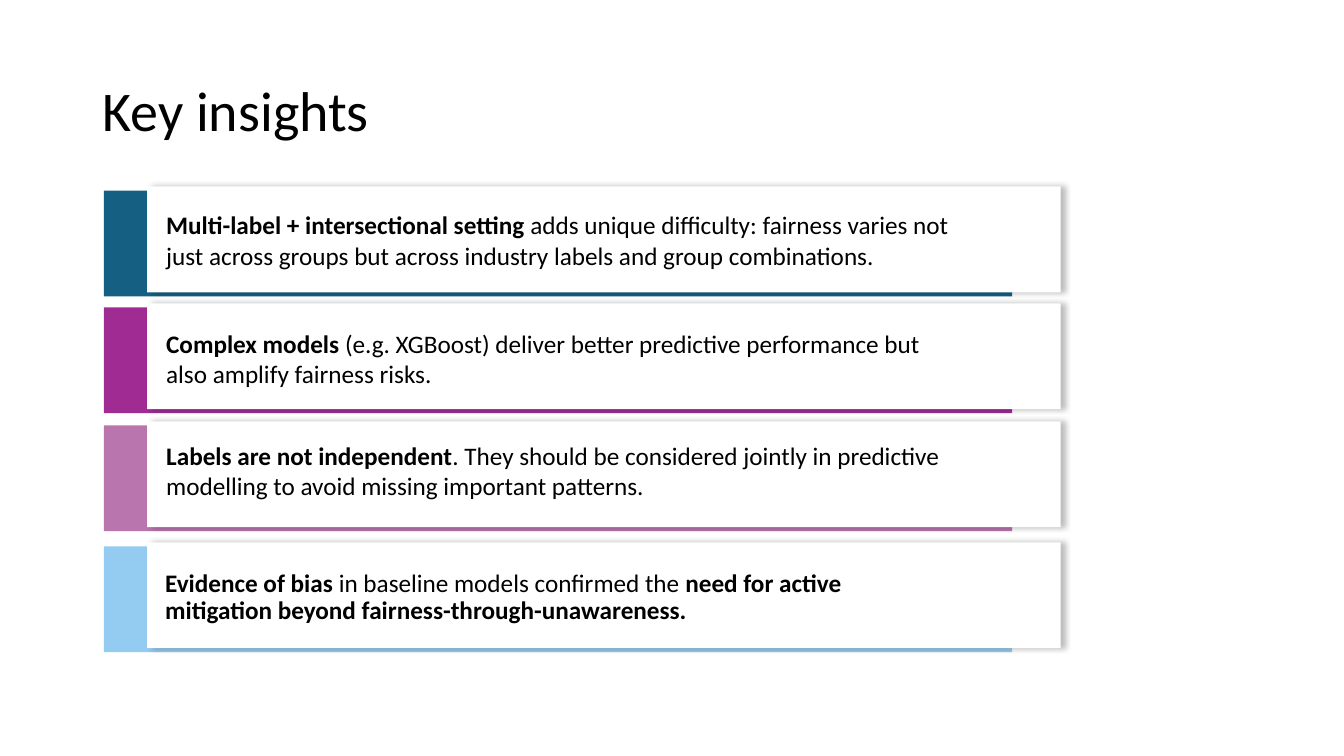
from dataclasses import dataclass

from lxml import etree
from pptx import Presentation
from pptx.dml.color import RGBColor
from pptx.enum.shapes import MSO_SHAPE
from pptx.enum.text import MSO_ANCHOR
from pptx.oxml import parse_xml
from pptx.oxml.ns import nsdecls
from pptx.shapes.autoshape import Shape
from pptx.slide import Slide
from pptx.util import Inches, Pt

COLORS = {
    "text": "000000",
    "card": "FFFFFF",
    "teal": "156082",
    "purple": "A02B93",
    "mauve": "B975AE",
    "sky": "93CCF0",
}
TITLE_FONT = {"name": "Calibri", "size": Pt(40), "bold": False}
BODY_FONT = {"name": "Calibri", "size": Pt(18)}

BAR_LEFT, BAR_WIDTH = 1.03, 9.01
CARD_LEFT, CARD_WIDTH = 1.46, 9.06
ROW_HEIGHT = 1.05
CARD_LIFT = 0.04


@dataclass
class Insight:
    color: str
    top: float
    text_box: tuple[float, float, float, float]
    runs: list[tuple[str, bool]]
    line_spacing: float = 1.0


INSIGHTS = [
    Insight("teal", 1.89, (1.55, 2.03, 8.36, 0.95), [
        ("Multi-label + intersectional setting ", True),
        ("adds unique difficulty: fairness varies not just across groups "
         "but across industry labels and group combinations.", False),
    ]),
    Insight("purple", 3.05, (1.55, 3.21, 7.93, 0.65), [
        ("Complex models ", True),
        ("(e.g. XGBoost) deliver better predictive performance but also "
         "amplify fairness risks.", False),
    ]),
    Insight("mauve", 4.22, (1.55, 4.32, 8.71, 0.87), [
        ("Labels are not independent", True),
        (". They should be considered jointly in predictive modelling to "
         "avoid missing important patterns.", False),
    ]),
    Insight("sky", 5.42, (1.54, 5.61, 7.12, 0.59), [
        ("Evidence of bias ", True),
        ("in baseline models confirmed the ", False),
        ("need for active mitigation beyond fairness-through-unawareness.", True),
    ], 0.9),
]


def add_rect(s: Slide, left: float, top: float, width: float, color: str) -> Shape:
    sp = s.shapes.add_shape(MSO_SHAPE.RECTANGLE, Inches(left), Inches(top),
                            Inches(width), Inches(ROW_HEIGHT))
    sp.shadow.inherit = False
    sp.fill.solid()
    sp.fill.fore_color.rgb = RGBColor.from_string(COLORS[color])
    sp.line.fill.background()
    return sp


def add_shadow(sp: Shape) -> None:
    effects = sp.element.spPr.find("{*}effectLst")
    shadow: etree.ElementBase = parse_xml(
        f'<a:outerShdw {nsdecls("a")} blurRad="{Pt(4)}" dist="{Pt(3)}" dir="0" '
        'algn="ctr" rotWithShape="0"><a:srgbClr val="000000">'
        '<a:alpha val="25000"/></a:srgbClr></a:outerShdw>')
    effects.append(shadow)


def add_text(s: Slide, box: tuple[float, float, float, float],
             runs: list[tuple[str, bool]], formats: dict,
             line_spacing: float, anchor: MSO_ANCHOR = MSO_ANCHOR.TOP) -> None:
    tf = s.shapes.add_textbox(*map(Inches, box)).text_frame
    tf.word_wrap = True
    tf.vertical_anchor = anchor
    p = tf.paragraphs[0]
    p.line_spacing = line_spacing
    for text, bold in runs:
        r = p.add_run()
        r.text = text
        for name, value in {**formats, "bold": bold}.items():
            setattr(r.font, name, value)
        r.font.color.rgb = RGBColor.from_string(COLORS["text"])


def main() -> None:
    prs = Presentation()
    prs.slide_width, prs.slide_height = Inches(13.33), Inches(7.5)
    s = prs.slides.add_slide(prs.slide_layouts[6])

    # Title
    add_text(s, (0.92, 0.4, 11.5, 1.45), [("Key insights", False)],
             TITLE_FONT, 0.9, MSO_ANCHOR.MIDDLE)

    # Coloured bars with raised cards
    for insight in INSIGHTS:
        add_rect(s, BAR_LEFT, insight.top, BAR_WIDTH, insight.color)
        add_shadow(add_rect(s, CARD_LEFT, insight.top - CARD_LIFT, CARD_WIDTH, "card"))

    # Insight texts
    for insight in INSIGHTS:
        add_text(s, insight.text_box, insight.runs, BODY_FONT, insight.line_spacing)

    prs.save("out.pptx")


if __name__ == "__main__":
    main()
